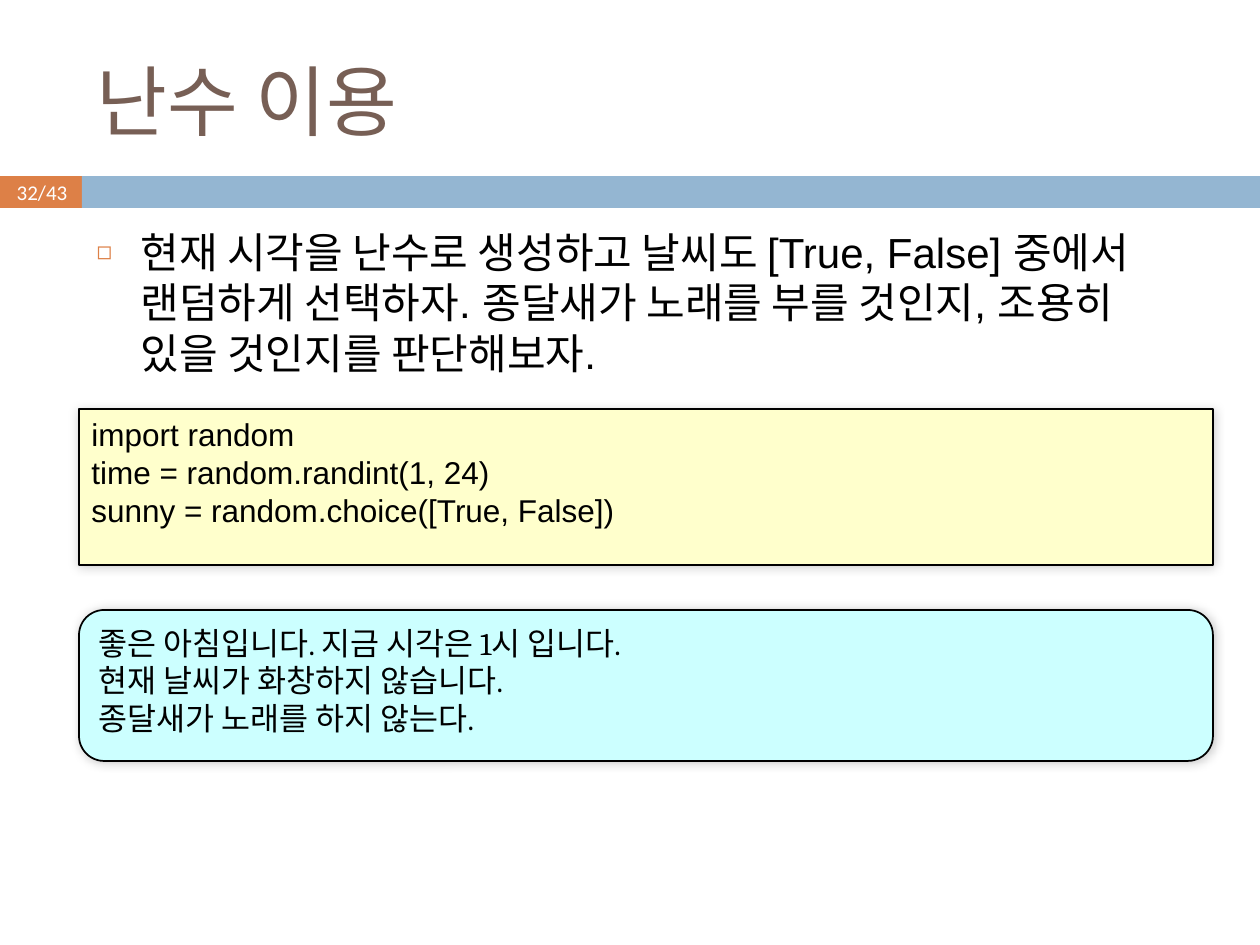
from lxml import etree
from pptx import Presentation
from pptx.dml.color import RGBColor
from pptx.enum.shapes import MSO_SHAPE
from pptx.enum.text import MSO_ANCHOR, MSO_AUTO_SIZE, PP_ALIGN
from pptx.oxml import parse_xml
from pptx.oxml.ns import nsdecls, qn
from pptx.util import Emu, Pt

RECT = MSO_SHAPE.RECTANGLE
ROUNDED = MSO_SHAPE.FLOWCHART_ALTERNATE_PROCESS
TOP, MIDDLE = MSO_ANCHOR.TOP, MSO_ANCHOR.MIDDLE
LEFT, CENTER = PP_ALIGN.LEFT, PP_ALIGN.CENTER
NO_FIT = MSO_AUTO_SIZE.NONE

ORANGE, BLUE, BROWN = "DD8047", "94B6D2", "775F55"
BLACK, WHITE = "000000", "FFFFFF"
YELLOW, CYAN = "FFFFCC", "CCFFFF"


def px(n):
    return Emu(round(n * 914400 / 126))


def color(value):
    return RGBColor.from_string(value)


def place(sp, box):
    for name, value in zip(("left", "top", "width", "height"), box):
        setattr(sp, name, px(value))


def write(sp, lines, size, font, ink, anchor=TOP, align=LEFT):
    tf = sp.text_frame
    frame = {"word_wrap": True, "auto_size": NO_FIT, "vertical_anchor": anchor}
    for name, value in frame.items():
        setattr(tf, name, value)
    for i, line in enumerate(lines):
        p = tf.paragraphs[0] if i == 0 else tf.add_paragraph()
        p.alignment = align
        r = p.add_run()
        r.text = line
        for name, value in {"size": Pt(size), "name": font}.items():
            setattr(r.font, name, value)
        r.font.color.rgb = color(ink)


def add_box(slide, kind, box, fill):
    sp = slide.shapes.add_shape(kind, *map(px, box))
    sp.shadow.inherit = False
    sp.fill.solid()
    sp.fill.fore_color.rgb = color(fill)
    sp.line.fill.background()
    return sp


def add_shadow(sp):
    effects = sp._element.spPr.find(qn("a:effectLst"))
    effects.append(parse_xml(
        f'<a:outerShdw {nsdecls("a")} blurRad="76200" dist="0" dir="18900000">'
        f'<a:srgbClr val="{BLACK}"><a:alpha val="20000"/></a:srgbClr>'
        '</a:outerShdw>'))


def add_panel(slide, kind, box, fill, lines, font):
    sp = add_box(slide, kind, box, fill)
    sp.line.color.rgb = color(BLACK)
    sp.line.width = Pt(1)
    add_shadow(sp)
    write(sp, lines, 18, font, BLACK)


def set_bullet(p, char, ink, percent, indent):
    pPr = p._p.get_or_add_pPr()
    pPr.set("marL", str(px(indent)))
    pPr.set("indent", str(-px(indent)))
    clr = etree.SubElement(pPr, qn("a:buClr"))
    etree.SubElement(clr, qn("a:srgbClr"), val=ink)
    etree.SubElement(pPr, qn("a:buSzPct"), val=str(percent * 1000))
    etree.SubElement(pPr, qn("a:buChar"), char=char)


def main():
    prs = Presentation()
    prs.slide_width, prs.slide_height = px(1260), px(945)
    slide = prs.slides.add_slide(prs.slide_layouts[1])
    title, body = slide.placeholders

    # Title
    place(title, (84, 32, 1124, 136))
    write(title, ["난수 이용"], 44, "Calibri", BROWN, MIDDLE)

    # Page number and band
    badge = add_box(slide, RECT, (0, 176, 84, 32), ORANGE)
    write(badge, ["32/43"], 12, "Calibri", WHITE, MIDDLE, CENTER)
    add_box(slide, RECT, (82, 176, 1178, 32), BLUE)

    # Task description
    place(body, (84, 220, 1124, 620))
    write(body, ["현재 시각을 난수로 생성하고 날씨도 [True, False] 중에서 "
                 "랜덤하게 선택하자. 종달새가 노래를 부를 것인지, 조용히 "
                 "있을 것인지를 판단해보자."], 24, "Arial", BLACK)
    p = body.text_frame.paragraphs[0]
    p.space_before = Pt(7)
    set_bullet(p, "◻", ORANGE, 60, 44)

    # Code and its output
    add_panel(slide, RECT, (79, 409, 1134, 156), YELLOW,
              ["import random",
               "time = random.randint(1, 24)",
               "sunny = random.choice([True, False])"], "Arial")
    add_panel(slide, ROUNDED, (79, 610, 1134, 151), CYAN,
              ["좋은 아침입니다. 지금 시각은 1시 입니다.",
               "현재 날씨가 화창하지 않습니다.",
               "종달새가 노래를 하지 않는다."], "Cambria")

    prs.save("out.pptx")


if __name__ == "__main__":
    main()
